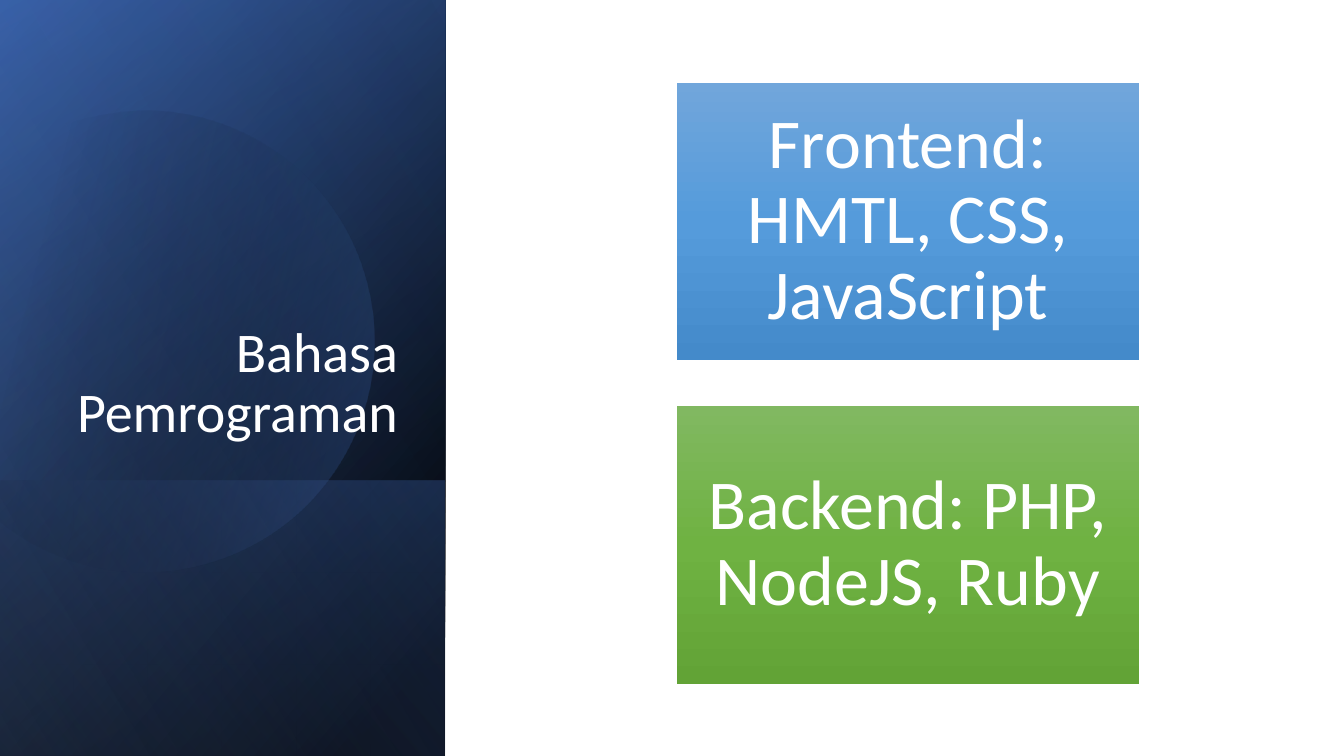
from dataclasses import dataclass
from math import cos, radians, sin

from lxml import etree
from pptx import Presentation
from pptx import util as u
from pptx.dml.color import RGBColor
from pptx.enum import shapes, text
from pptx.oxml.ns import qn


@dataclass(frozen=True)
class Theme:
    font: str = "Calibri"
    title_size: int = 40
    card_size: int = 50
    white: str = "FFFFFF"
    black: str = "000000"
    navy: str = "2F5597"
    blue: str = "4472C4"
    pale: str = "8FAADC"
    frontend: tuple = ("71A6DB", "559BDB", "448ACA")
    backend: tuple = ("81B861", "6FB242", "62A336")


T = Theme()
PANEL_W, PANEL_H = 11.23, 19.05
PANEL_BOX = (-3.92, 3.91, PANEL_H, PANEL_W)
FOOT_BOX = (2.12, 9.97, 6.96, PANEL_W)
CARD_LEFT, CARD_TOP, CARD_W, CARD_H, CARD_STEP = 17.06, 2.08, 11.65, 6.99, 8.16
DISC_BOX = (-1.4, 2.69, 10.85, 11.61)
DISC_ROTATION = 343.9
DISC_OUTLINE = [
    ("moveTo", [(3.78, 2.79)]),
    ("cubicBezTo", [(6.25, 2.84), (8.51, 4.5), (9.22, 6.99)]),
    ("cubicBezTo", [(10.11, 10.08), (8.33, 13.28), (5.26, 14.17)]),
    ("cubicBezTo", [(3.33, 14.73), (1.35, 14.25), (-0.08, 13.06)]),
    ("lnTo", [(-0.38, 12.78)]),
    ("lnTo", [(-0.38, 4.45)]),
    ("lnTo", [(0, 4.09)]),
    ("cubicBezTo", [(0.58, 3.61), (1.27, 3.25), (2.03, 3.02)]),
    ("cubicBezTo", [(2.62, 2.87), (3.2, 2.79), (3.78, 2.79)]),
    ("close", []),
]


def paint(sp, stops, angle):
    sp.shadow.inherit = False
    sp.line.fill.background()
    sp.fill.gradient()
    grad = sp._element.spPr.find(qn("a:gradFill"))
    grad.find(qn("a:lin")).set("ang", str(angle * 60000))
    gs_list = grad.find(qn("a:gsLst"))
    for old in list(gs_list):
        gs_list.remove(old)
    for position, color, opacity in stops:
        gs = etree.SubElement(gs_list, qn("a:gs"), pos=str(position * 1000))
        clr = etree.SubElement(gs, qn("a:srgbClr"), val=color)
        if opacity < 100:
            etree.SubElement(clr, qn("a:alpha"), val=str(opacity * 1000))


def add_rect(s, box):
    return s.shapes.add_shape(shapes.MSO_SHAPE.RECTANGLE, *map(u.Cm, box))


def add_panel(s, box, stops, angle):
    sp = add_rect(s, box)
    sp.rotation = 90
    sp._element.spPr.find(qn("a:xfrm")).set("flipH", "1")
    paint(sp, stops, angle)


def unrotate(point, box, rotation):
    left, top, width, height = box
    a = radians(-rotation)
    dx, dy = point[0] - left - width / 2, point[1] - top - height / 2
    return (u.Cm(width / 2 + dx * cos(a) - dy * sin(a)),
            u.Cm(height / 2 + dx * sin(a) + dy * cos(a)))


def add_disc(s, stops, angle):
    left, top, width, height = map(u.Cm, DISC_BOX)
    right, bottom = left + width, top + height
    builder = s.shapes.build_freeform(left, top)
    builder.add_line_segments([(right, top), (right, bottom), (left, bottom)])
    sp = builder.convert_to_shape()
    sp.rotation = DISC_ROTATION
    outline = sp._element.spPr.find(".//" + qn("a:path"))
    for old in list(outline):
        outline.remove(old)
    for command, points in DISC_OUTLINE:
        step = etree.SubElement(outline, qn("a:" + command))
        for point in points:
            x, y = unrotate(point, DISC_BOX, DISC_ROTATION)
            etree.SubElement(step, qn("a:pt"), x=str(x), y=str(y))
    paint(sp, stops, angle)


def write(tf, words, size, align, anchor):
    tf.word_wrap = True
    tf.auto_size = text.MSO_AUTO_SIZE.NONE
    tf.vertical_anchor = anchor
    p = tf.paragraphs[0]
    p.alignment = align
    p.line_spacing = 0.9
    r = p.add_run()
    r.text = words
    r.font.name = T.font
    r.font.size = u.Pt(size)
    r.font.color.rgb = RGBColor.from_string(T.white)


def add_title(s, words):
    sp = s.shapes.title
    s.shapes._spTree.append(sp._element)
    sp.left, sp.top, sp.width, sp.height = map(u.Cm, (1.62, 4.68, 8.66, 6.66))
    write(sp.text_frame, words, T.title_size,
          text.PP_ALIGN.RIGHT, text.MSO_ANCHOR.BOTTOM)


def add_card(s, row, words, colors):
    sp = add_rect(s, (CARD_LEFT, CARD_TOP + row * CARD_STEP, CARD_W, CARD_H))
    paint(sp, [(pos, c, 100) for pos, c in zip((0, 50, 100), colors)], 90)
    tf = sp.text_frame
    tf.margin_left = tf.margin_right = tf.margin_top = tf.margin_bottom = u.Cm(0.53)
    write(tf, words, T.card_size, text.PP_ALIGN.CENTER, text.MSO_ANCHOR.MIDDLE)


def main():
    prs = Presentation()
    prs.slide_width, prs.slide_height = u.Cm(33.87), u.Cm(19.05)
    s = prs.slides.add_slide(prs.slide_layouts[5])
    add_panel(s, PANEL_BOX, [(8, T.black, 100), (100, T.navy, 100)], 50)
    add_panel(s, PANEL_BOX, [(0, T.black, 0), (99, T.blue, 46)], 30)
    add_panel(s, FOOT_BOX, [(2, T.blue, 29), (100, T.black, 30)], 130)
    add_disc(s, [(29, T.black, 0), (100, T.blue, 43)], 30)
    add_panel(s, PANEL_BOX, [(0, T.black, 0), (99, T.pale, 11)], 120)
    add_title(s, "Bahasa Pemrograman")
    cards = [
        ("Frontend: HMTL, CSS, JavaScript", T.frontend),
        ("Backend: PHP, NodeJS, Ruby", T.backend),
    ]
    for row, (words, colors) in enumerate(cards):
        add_card(s, row, words, colors)
    prs.save("out.pptx")


if __name__ == "__main__":
    main()
